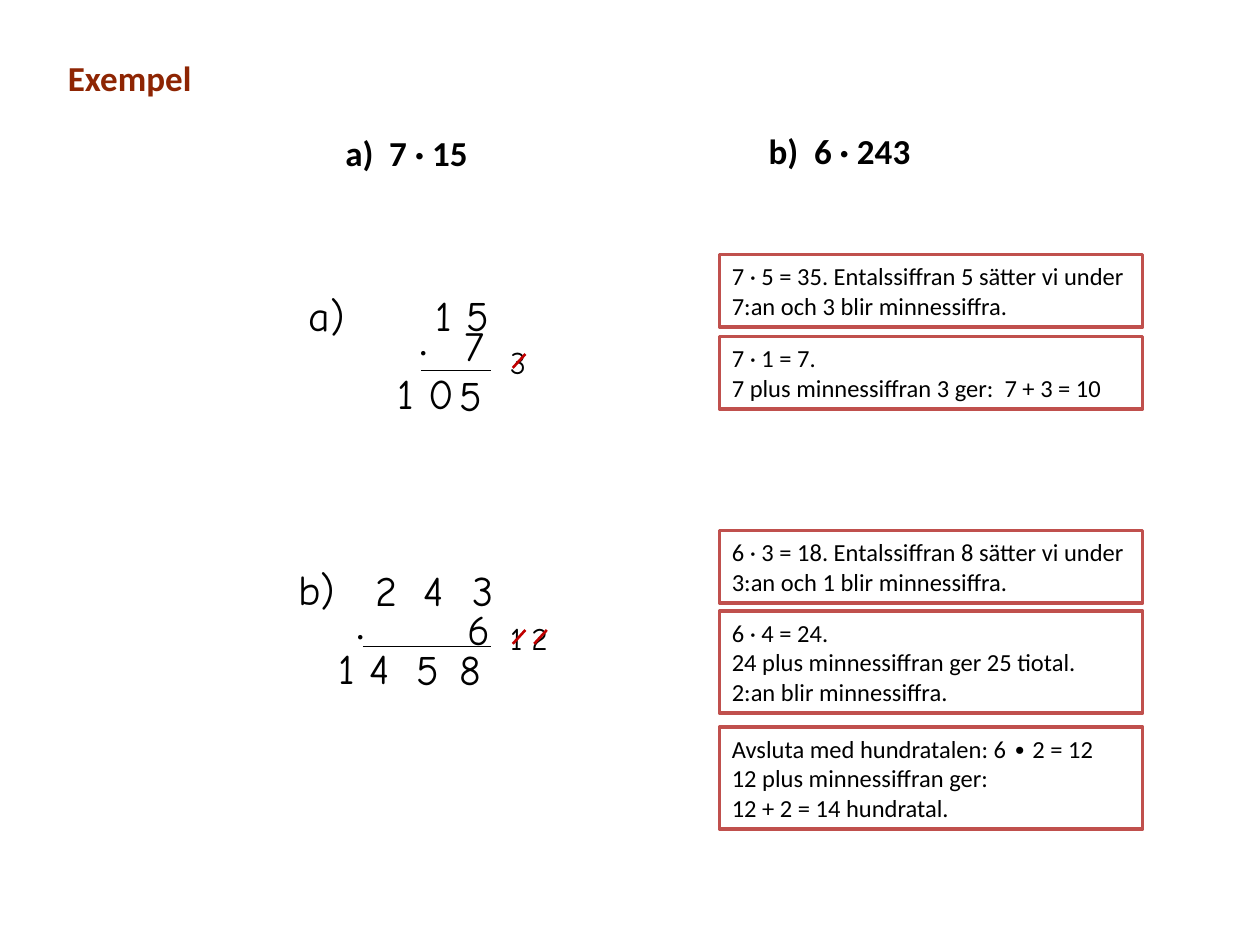
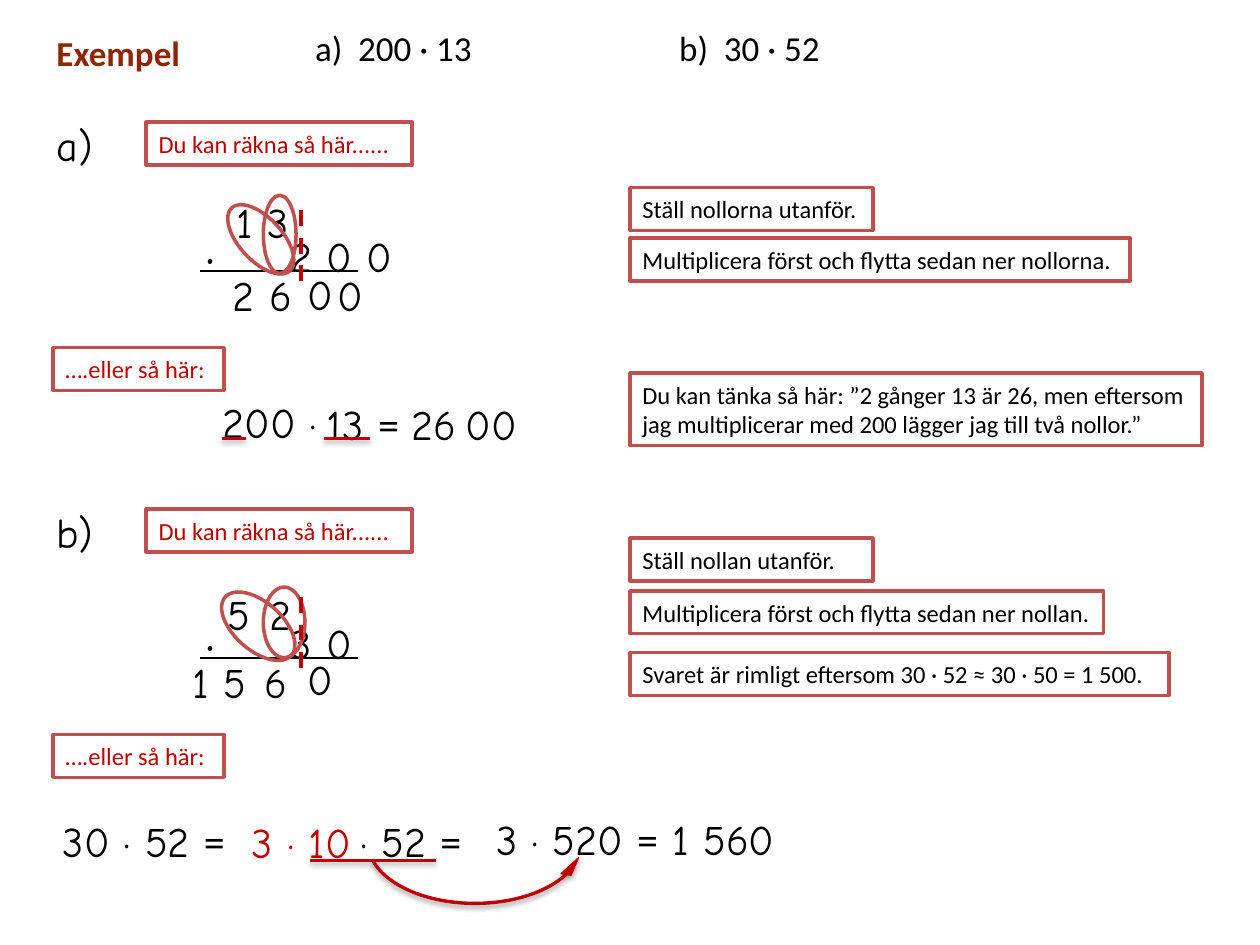
import pptx
import pptx.util
import pptx.dml.color
import pptx.enum.dml
import pptx.enum.shapes
import pptx.enum.text
from lxml import etree

Inches = pptx.util.Inches
Pt = pptx.util.Pt
RGBColor = pptx.dml.color.RGBColor
SHAPE = pptx.enum.shapes.MSO_SHAPE

BLACK = RGBColor(0, 0, 0)
WHITE = RGBColor(0xFF, 0xFF, 0xFF)
BROWN = RGBColor(0x8E, 0x25, 0x03)
FRAME = RGBColor(0xC0, 0x50, 0x4D)
RED = RGBColor(0xC0, 0, 0)
PRINT = "Calibri"
HAND = "Comic Neue"
DRAWING = "http://schemas.openxmlformats.org/drawingml/2006/main"


def style(font, size, name, color, bold=False):
    font.size = Pt(size)
    font.name = name
    font.color.rgb = color
    font.bold = bold


def write(slide, x, y, text, size=24, name=HAND, color=BLACK, bold=False, tail=""):
    """Write one line; the tail is set in the print font."""
    width = 0.2 * len(text + tail) + 0.3
    box = slide.shapes.add_textbox(Inches(x), Inches(y), Inches(width), Inches(size / 48))
    box.text_frame.word_wrap = True
    para = box.text_frame.paragraphs[0]
    para.add_run().text = text
    style(para.font, size, name, color, bold)
    if tail:
        run = para.add_run()
        run.text = tail
        run.font.name = PRINT


def title(slide, x, y):
    write(slide, x, y, "Exempel", 20, PRINT, BROWN, True)


def task(slide, x, y, width, text, bold=False):
    """Place a task in a plain table of one cell."""
    table = slide.shapes.add_table(1, 1, Inches(x), Inches(y), Inches(width), Inches(0.33)).table
    table.first_row = table.horz_banding = False
    cell = table.cell(0, 0)
    cell.fill.background()
    cell.margin_left = cell.margin_right = Inches(0.05)
    cell.margin_top = cell.margin_bottom = 0
    cell.text = text
    style(cell.text_frame.paragraphs[0].font, 20, PRINT, BLACK, bold)


def note(slide, x, y, width, lines, rows=1, color=BLACK):
    height = 0.34 + 0.235 * (rows - 1)
    box = slide.shapes.add_shape(SHAPE.RECTANGLE, Inches(x), Inches(y), Inches(width), Inches(height))
    box.shadow.inherit = False
    box.fill.solid()
    box.fill.fore_color.rgb = WHITE
    box.line.color.rgb = FRAME
    box.line.width = Pt(2)
    box.text_frame.text = lines
    for para in box.text_frame.paragraphs:
        para.alignment = pptx.enum.text.PP_ALIGN.LEFT
        style(para.font, 14, PRINT, color)


def shade(shape, glow):
    """Set an effect list, with a soft shadow below if glow is true."""
    props = shape._element.spPr
    for old in props.findall(f"{{{DRAWING}}}effectLst"):
        props.remove(old)
    effects = etree.SubElement(props, f"{{{DRAWING}}}effectLst")
    if glow:
        shadow = etree.SubElement(effects, f"{{{DRAWING}}}outerShdw", blurRad="40000",
                                  dist="20000", dir="5400000", rotWithShape="0")
        tone = etree.SubElement(shadow, f"{{{DRAWING}}}srgbClr", val="000000")
        etree.SubElement(tone, f"{{{DRAWING}}}alpha", val="38000")


def rule(slide, x1, y1, x2, y2, color=BLACK, width=1.0, dash=False, glow=False):
    line = slide.shapes.add_connector(pptx.enum.shapes.MSO_CONNECTOR.STRAIGHT,
                                      Inches(x1), Inches(y1), Inches(x2), Inches(y2))
    line.line.color.rgb = color
    line.line.width = Pt(width)
    if dash:
        line.line.dash_style = pptx.enum.dml.MSO_LINE.DASH
    shade(line, glow)


def under(slide, x1, x2, y):
    rule(slide, x1, y, x2, y, RED, 1.5, glow=True)


def ring(slide, x, y, width, height, turn=0):
    oval = slide.shapes.add_shape(SHAPE.OVAL, Inches(x), Inches(y), Inches(width), Inches(height))
    oval.shadow.inherit = False
    oval.fill.background()
    oval.line.color.rgb = FRAME
    oval.line.width = Pt(2)
    oval.rotation = turn


def carry(slide, x, y, digit):
    """Write a small carried digit and strike it out."""
    write(slide, x, y, digit, 18)
    rule(slide, x + 0.12, y + 0.25, x + 0.22, y + 0.14, RED, 1.5)


def sum_a(slide, x, y):
    write(slide, x, y, "a)")
    write(slide, x + 1.01, y, "1 5")
    write(slide, x + 0.88, y + 0.33, "·", 18, PRINT)
    write(slide, x + 1.24, y + 0.24, "7")
    rule(slide, x + 0.99, y + 0.69, x + 1.55, y + 0.69)
    carry(slide, x + 1.6, y + 0.42, "3")
    write(slide, x + 0.71, y + 0.62, "1 0")
    write(slide, x + 1.2, y + 0.63, "5")


def sum_b(slide, x, y):
    write(slide, x, y, "b)")
    for i, digit in enumerate("243"):
        write(slide, x + 0.61 + 0.385 * i, y + 0.01, digit)
    write(slide, x + 0.46, y + 0.41, "·", 18, PRINT)
    write(slide, x + 1.34, y + 0.32, "6")
    rule(slide, x + 0.61, y + 0.71, x + 1.63, y + 0.71)
    for i, digit in enumerate("12"):
        carry(slide, x + 1.68 + 0.17 * i, y + 0.44, digit)
    write(slide, x + 0.32, y + 0.63, "1 4")
    write(slide, x + 0.94, y + 0.64, "5")
    write(slide, x + 1.28, y + 0.64, "8")


def method(slide, x, y, name, factor, digits, rings):
    """Lay out a sum with its zeros set apart; digits are (x, y, text)."""
    write(slide, x, y, name)
    note(slide, x + 0.81, y + 0.07, 2.11, "Du kan räkna så här......", color=RED)
    write(slide, x + 1.19, y + 0.88, "·", bold=True)
    write(slide, x + 1.86, y + 0.88, factor)
    rule(slide, x + 1.24, y + 1.25, x + 2.49, y + 1.25, width=1.25)
    for left, top, text in digits:
        write(slide, x + left, y + top, text)
    for left, top, width, height, turn in rings:
        ring(slide, x + left, y + top, width, height, turn)
    rule(slide, x + 2.04, y + 1.33, x + 2.04, y + 0.7, RED, 2.25, dash=True)
    note(slide, x + 0.07, y + 1.86, 1.36, "….eller så här:", color=RED)


def short_a(slide, x, y):
    write(slide, x, y, "200 ·")
    write(slide, x + 0.82, y + 0.01, "13 ", tail="=")
    write(slide, x + 1.5, y + 0.01, "26")
    write(slide, x + 1.93, y + 0.01, "00")
    under(slide, x + 0.09, x + 0.28, y + 0.38)
    under(slide, x + 0.9, x + 1.27, y + 0.38)


def short_b(slide, x, y):
    write(slide, x, y, "30 · 52 ", tail="=")
    write(slide, x + 2.36, y, "· 52 ", tail="=")
    write(slide, x + 1.5, y + 0.01, "3 · 10", color=RED)
    write(slide, x + 3.44, y - 0.01, "3 · 520 ", tail="=")
    write(slide, x + 4.84, y - 0.01, "1 560")
    under(slide, x + 2.06, x + 3.06, y + 0.41)
    arrow = slide.shapes.add_shape(SHAPE.CIRCULAR_ARROW, Inches(x + 2.48), Inches(y - 0.26),
                                   Inches(1.78), Inches(1.05))
    for i, value in enumerate((0.016, 6.681, 204.299, 114.681, 0.038)):
        arrow.adjustments[i] = value
    arrow._element.spPr.xfrm.set("flipV", "1")
    arrow.fill.solid()
    arrow.fill.fore_color.rgb = RED
    arrow.line.color.rgb = RED
    arrow.line.width = Pt(0.75)
    shade(arrow, True)


def carrying(slide):
    title(slide, 0.44, 0.4)
    task(slide, 2.69, 1.06, 1.58, "a)  7 · 15", True)
    task(slide, 6.05, 1.04, 2.16, "b)  6 · 243", True)
    sum_a(slide, 2.35, 2.25)
    sum_b(slide, 2.27, 4.42)
    for y, rows, lines in (
        (2.02, 2, "7 · 5 = 35. Entalssiffran 5 sätter vi under 7:an och 3 blir minnessiffra."),
        (2.67, 2, "7 · 1 = 7.\n7 plus minnessiffran 3 ger:  7 + 3 = 10"),
        (4.21, 2, "6 · 3 = 18. Entalssiffran 8 sätter vi under 3:an och 1 blir minnessiffra."),
        (4.85, 3, "6 · 4 = 24.\n24 plus minnessiffran ger 25 tiotal.\n2:an blir minnessiffra."),
        (5.77, 3, "Avsluta med hundratalen: 6 ∙ 2 = 12\n12 plus minnessiffran ger:\n"
                  "12 + 2 = 14 hundratal."),
    ):
        note(slide, 5.71, y, 3.36, lines, rows)


def zeros(slide):
    title(slide, 0.35, 0.2)
    task(slide, 2.45, 0.22, 1.58, "a)  200 · 13")
    task(slide, 5.34, 0.22, 2.16, "b)  30 · 52")
    method(slide, 0.35, 0.9, "a)", "2 0 0",
           [(1.43, 0.61, "1 3"), (1.4, 1.19, "2"), (1.69, 1.19, "6"),
            (1.99, 1.18, "0"), (2.23, 1.19, "0")],
           [(1.74, 0.65, 0.26, 0.62, 0), (1.55, 0.66, 0.34, 0.68, 317.3)])
    short_a(slide, 1.67, 3.1)
    method(slide, 0.35, 3.97, "b)", "3 0",
           [(1.36, 0.65, "5"), (1.69, 0.65, "2"), (1.08, 1.19, "1 5"),
            (1.65, 1.19, "6"), (1.99, 1.17, "0")],
           [(1.74, 0.69, 0.33, 0.56, 0), (1.51, 0.65, 0.38, 0.7, 311.4)])
    short_b(slide, 0.4, 6.42)
    for y, width, rows, lines in (
        (1.49, 1.93, 1, "Ställ nollorna utanför."),
        (1.89, 3.97, 1, "Multiplicera först och flytta sedan ner nollorna."),
        (2.96, 4.54, 2, "Du kan tänka så här: ”2 gånger 13 är 26, men eftersom "
                        "jag multiplicerar med 200 lägger jag till två nollor.”"),
        (4.27, 1.93, 1, "Ställ nollan utanför."),
        (4.69, 3.76, 1, "Multiplicera först och flytta sedan ner nollan."),
        (5.18, 4.28, 1, "Svaret är rimligt eftersom 30 · 52 ≈ 30 · 50 = 1 500."),
    ):
        note(slide, 5, y, width, lines, rows)


def main():
    deck = pptx.Presentation()
    deck.slide_width = Inches(10)
    deck.slide_height = Inches(7.5)
    for build in (carrying, zeros):
        build(deck.slides.add_slide(deck.slide_layouts[6]))
    deck.save("out.pptx")


if __name__ == "__main__":
    main()
